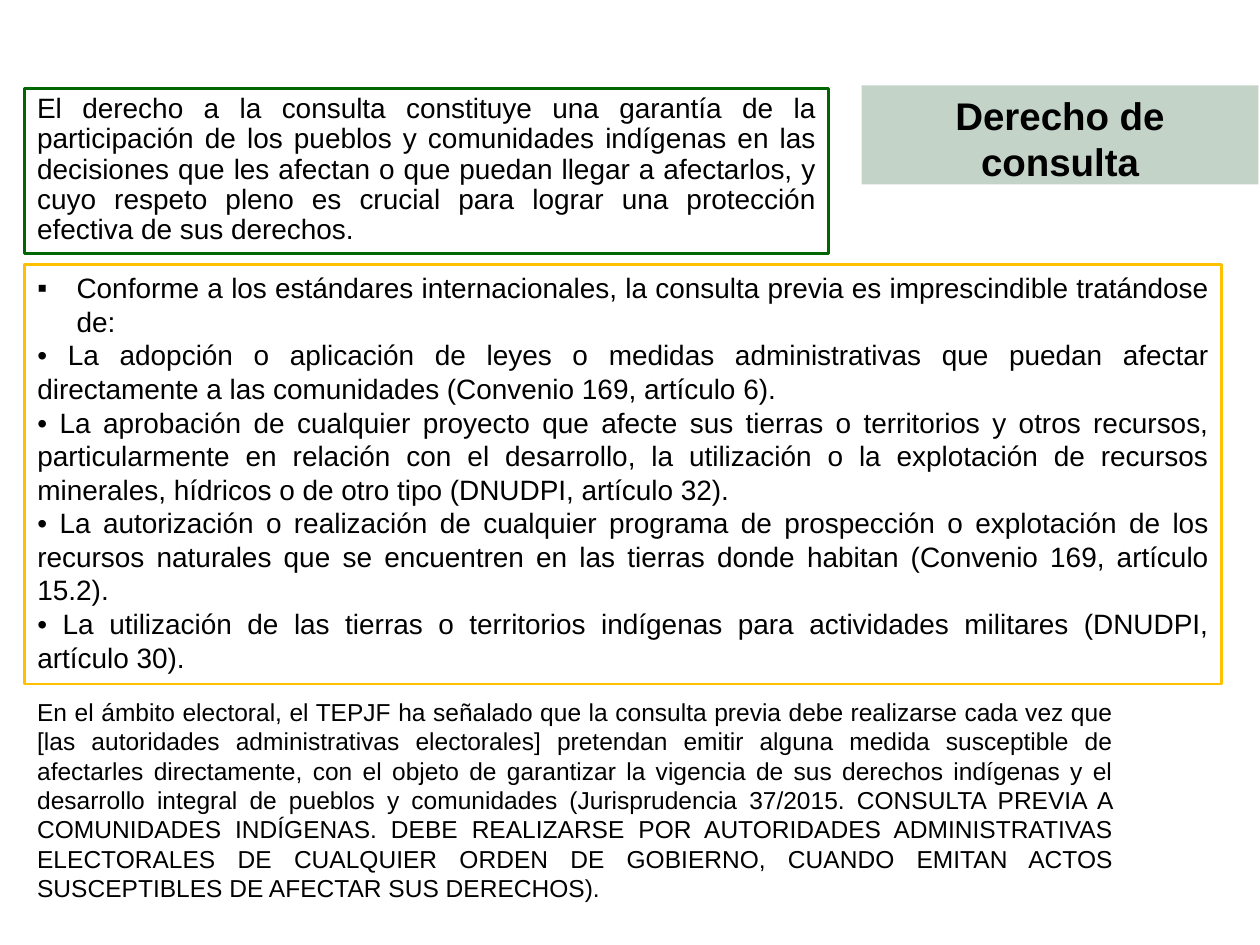
from dataclasses import dataclass

from lxml import etree
from pptx import Presentation
from pptx.dml.color import RGBColor
from pptx.enum.text import MSO_ANCHOR, MSO_AUTO_SIZE, PP_ALIGN
from pptx.oxml.ns import qn
from pptx.util import Cm, Pt

CENTER, JUSTIFY = PP_ALIGN.CENTER, PP_ALIGN.JUSTIFY
TOP = MSO_ANCHOR.TOP
NO_FIT, GROW = MSO_AUTO_SIZE.NONE, MSO_AUTO_SIZE.SHAPE_TO_FIT_TEXT
FONT = "Arial"
COLORS = {
    "text": "000000",
    "title_fill": "1E582C",
    "intro_line": "006600",
    "list_line": "FFC000",
}
TITLE_OPACITY = 26  # percent
BULLET_INDENT = Cm(0.79)
LEFT = 0.5

TITLE = "Derecho de consulta"
INTRO = (
    "El derecho a la consulta constituye una garantía de la participación de los "
    "pueblos y comunidades indígenas en las decisiones que les afectan o que puedan "
    "llegar a afectarlos, y cuyo respeto pleno es crucial para lograr una protección "
    "efectiva de sus derechos."
)
LIST_HEADING = (
    "Conforme a los estándares internacionales, la consulta previa es "
    "imprescindible tratándose de: "
)
CASES = [
    "• La adopción o aplicación de leyes o medidas administrativas que puedan afectar "
    "directamente a las comunidades (Convenio 169, artículo 6). ",
    "• La aprobación de cualquier proyecto que afecte sus tierras o territorios y otros "
    "recursos, particularmente en relación con el desarrollo, la utilización o la "
    "explotación de recursos minerales, hídricos o de otro tipo (DNUDPI, artículo 32). ",
    "• La autorización o realización de cualquier programa de prospección o explotación "
    "de los recursos naturales que se encuentren en las tierras donde habitan "
    "(Convenio 169, artículo 15.2). ",
    "• La utilización de las tierras o territorios indígenas para actividades militares "
    "(DNUDPI, artículo 30).",
]
ELECTORAL = (
    "En el ámbito electoral, el TEPJF ha señalado que la consulta previa debe "
    "realizarse cada vez que [las autoridades administrativas electorales] pretendan "
    "emitir alguna medida susceptible de afectarles directamente, con el objeto de "
    "garantizar la vigencia de sus derechos indígenas y el desarrollo integral de "
    "pueblos y comunidades (Jurisprudencia 37/2015. CONSULTA PREVIA A COMUNIDADES "
    "INDÍGENAS. DEBE REALIZARSE POR AUTORIDADES ADMINISTRATIVAS ELECTORALES DE "
    "CUALQUIER ORDEN DE GOBIERNO, CUANDO EMITAN ACTOS SUSCEPTIBLES DE AFECTAR SUS "
    "DERECHOS). "
)


@dataclass(frozen=True)
class Box:
    """Position and size in centimetres."""
    left: float
    top: float
    width: float
    height: float


TITLE_BOX = Box(17.37, 1.72, 8.0, 2.0)
INTRO_BOX = Box(LEFT, 1.78, 16.2, 3.33)
LIST_BOX = Box(LEFT, 5.33, 24.13, 8.46)
ELECTORAL_BOX = Box(LEFT, 13.92, 22.2, 4.45)


def color(name: str) -> RGBColor:
    return RGBColor.from_string(COLORS[name])


def place(shape, box: Box, line: str = "", auto_size=NO_FIT) -> None:
    """Move a shape, outline it if asked and prepare its text frame."""
    shape.left, shape.top = Cm(box.left), Cm(box.top)
    shape.width, shape.height = Cm(box.width), Cm(box.height)
    if line:
        shape.line.color.rgb = color(line)
        shape.line.width = Pt(1.5)
    frame = shape.text_frame
    frame.word_wrap = True
    frame.auto_size = auto_size
    frame.vertical_anchor = TOP


def set_bullet(paragraph, bullet: str) -> None:
    """Give a paragraph a hanging bullet, or none when bullet is empty."""
    properties = paragraph._p.get_or_add_pPr()
    indent = BULLET_INDENT if bullet else 0
    properties.set("marL", str(indent))
    properties.set("indent", str(-indent))
    if bullet:
        etree.SubElement(properties, qn("a:buFont"), typeface=FONT)
        etree.SubElement(properties, qn("a:buChar"), char=bullet)
    else:
        etree.SubElement(properties, qn("a:buNone"))


def write(paragraph, text: str, size: float = 16, align=JUSTIFY, bold: bool = False,
          bullet: str = "", line_spacing: float = 1.0) -> None:
    """Fill one paragraph with formatted text."""
    set_bullet(paragraph, bullet)
    paragraph.alignment = align
    paragraph.line_spacing = line_spacing
    paragraph.space_before = Pt(0)
    run = paragraph.add_run()
    run.text = text
    run.font.name, run.font.size, run.font.bold = FONT, Pt(size), bold
    run.font.color.rgb = color("text")


def add_text(slide, box: Box, text: str, line: str = "", **text_format) -> None:
    shape = slide.shapes.add_textbox(0, 0, 0, 0)
    place(shape, box, line, auto_size=GROW)
    write(shape.text_frame.paragraphs[0], text, **text_format)


def main() -> None:
    presentation = Presentation()
    presentation.slide_width, presentation.slide_height = Cm(25.4), Cm(19.05)
    slide = presentation.slides.add_slide(presentation.slide_layouts[1])

    # Title on a translucent green band
    title = slide.shapes.title
    place(title, TITLE_BOX)
    title.fill.solid()
    title.fill.fore_color.rgb = color("title_fill")
    fill_color = title._element.spPr.find(qn("a:solidFill"))[0]
    etree.SubElement(fill_color, qn("a:alpha"), val=str(TITLE_OPACITY * 1000))
    write(title.text_frame.paragraphs[0], TITLE, size=22, align=CENTER, bold=True)

    # Introduction
    add_text(slide, INTRO_BOX, INTRO, line="intro_line", line_spacing=0.9)

    # Cases that require consultation, in a box of fixed height
    body = slide.placeholders[1]
    place(body, LIST_BOX, line="list_line")
    write(body.text_frame.paragraphs[0], LIST_HEADING, bullet="▪")
    for case in CASES:
        write(body.text_frame.add_paragraph(), case)

    # Electoral criterion
    add_text(slide, ELECTORAL_BOX, ELECTORAL, size=14)

    presentation.save("out.pptx")


if __name__ == "__main__":
    main()
